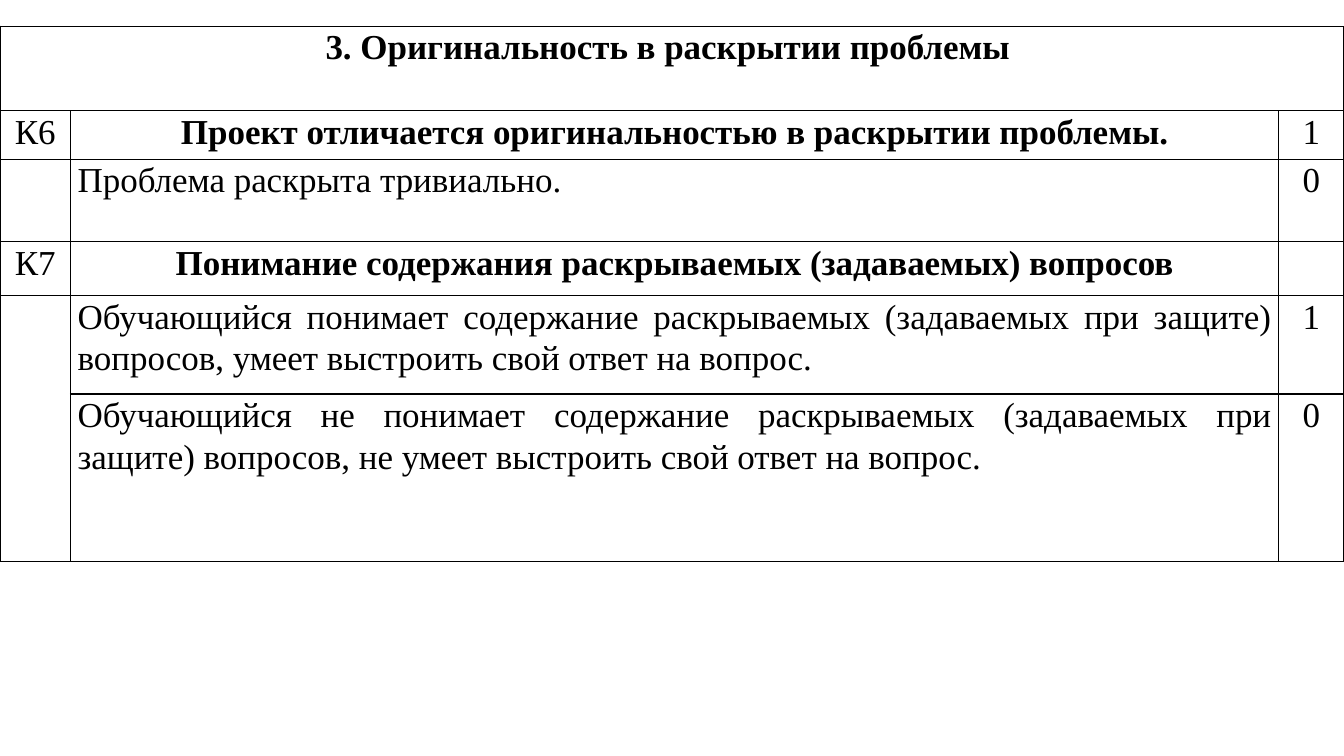
from dataclasses import dataclass

from lxml import etree
from pptx import Presentation
from pptx.dml.color import RGBColor
from pptx.enum.text import PP_ALIGN
from pptx.oxml.ns import qn
from pptx.util import Inches, Pt

CENTER, JUSTIFY = PP_ALIGN.CENTER, PP_ALIGN.JUSTIFY

# Content: section heading, then (code, criterion, points, is_heading)
SECTION = "3. Оригинальность в раскрытии проблемы "
CRITERIA = [
    ("К6", "Проект отличается оригинальностью в раскрытии проблемы.", "1", True),
    ("", "Проблема раскрыта тривиально.", "0", False),
    ("К7", "Понимание содержания раскрываемых (задаваемых) вопросов", "", True),
    ("", "Обучающийся понимает содержание раскрываемых (задаваемых при защите) "
         "вопросов, умеет выстроить свой ответ на вопрос.", "1", False),
    ("", "Обучающийся не понимает содержание раскрываемых (задаваемых при защите) "
         "вопросов, не умеет выстроить свой ответ на вопрос.", "0", False),
]
COLUMN_WIDTHS = [0.7, 11.98, 0.65]
ROW_HEIGHTS = [0.84, 0.48, 0.82, 0.53, 0.98, 1.66]
TABLE_TOP = 0.26


@dataclass(frozen=True)
class Theme:
    font: str = "Times New Roman"
    size: float = 25
    ink: str = "000000"
    paper: str = "FFFFFF"
    border: float = 1
    line_spacing: float = 1.07
    side_margin: float = 0.07


THEME = Theme()


def add_borders(cell):
    properties = cell._tc.get_or_add_tcPr()
    for position, side in enumerate(("lnL", "lnR", "lnT", "lnB")):
        line = etree.Element(qn(f"a:{side}"), w=str(Pt(THEME.border)))
        fill = etree.SubElement(line, qn("a:solidFill"))
        etree.SubElement(fill, qn("a:srgbClr"), val=THEME.ink)
        properties.insert(position, line)


def style_cell(cell):
    cell.margin_left = cell.margin_right = Inches(THEME.side_margin)
    cell.margin_top = cell.margin_bottom = 0
    cell.fill.solid()
    cell.fill.fore_color.rgb = RGBColor.from_string(THEME.paper)
    add_borders(cell)


def write(cell, text, align=CENTER, bold=False):
    cell.text = text
    paragraph = cell.text_frame.paragraphs[0]
    paragraph.alignment = align
    paragraph.line_spacing = THEME.line_spacing
    font = paragraph.font
    font.name, font.size, font.bold = THEME.font, Pt(THEME.size), bold
    font.color.rgb = RGBColor.from_string(THEME.ink)


def main():
    deck = Presentation()
    deck.slide_width, deck.slide_height = Inches(13.33), Inches(7.5)
    slide = deck.slides.add_slide(deck.slide_layouts[6])

    # Table grid
    table = slide.shapes.add_table(
        len(ROW_HEIGHTS), len(COLUMN_WIDTHS), 0, Inches(TABLE_TOP),
        Inches(sum(COLUMN_WIDTHS)), Inches(sum(ROW_HEIGHTS))).table
    table.first_row = table.horz_banding = False
    for column, width in zip(table.columns, COLUMN_WIDTHS):
        column.width = Inches(width)
    for row, height in zip(table.rows, ROW_HEIGHTS):
        row.height = Inches(height)
    for cell in table.iter_cells():
        style_cell(cell)

    # Merged section heading and the code cell shared by the last two rows
    table.cell(0, 0).merge(table.cell(0, 2))
    table.cell(4, 0).merge(table.cell(5, 0))
    write(table.cell(0, 0), SECTION, bold=True)

    # Criteria rows
    for row, (code, criterion, points, is_heading) in enumerate(CRITERIA, start=1):
        if code:
            write(table.cell(row, 0), code)
        write(table.cell(row, 1), criterion,
              CENTER if is_heading else JUSTIFY, is_heading)
        if points:
            write(table.cell(row, 2), points)

    deck.save("out.pptx")


if __name__ == "__main__":
    main()
